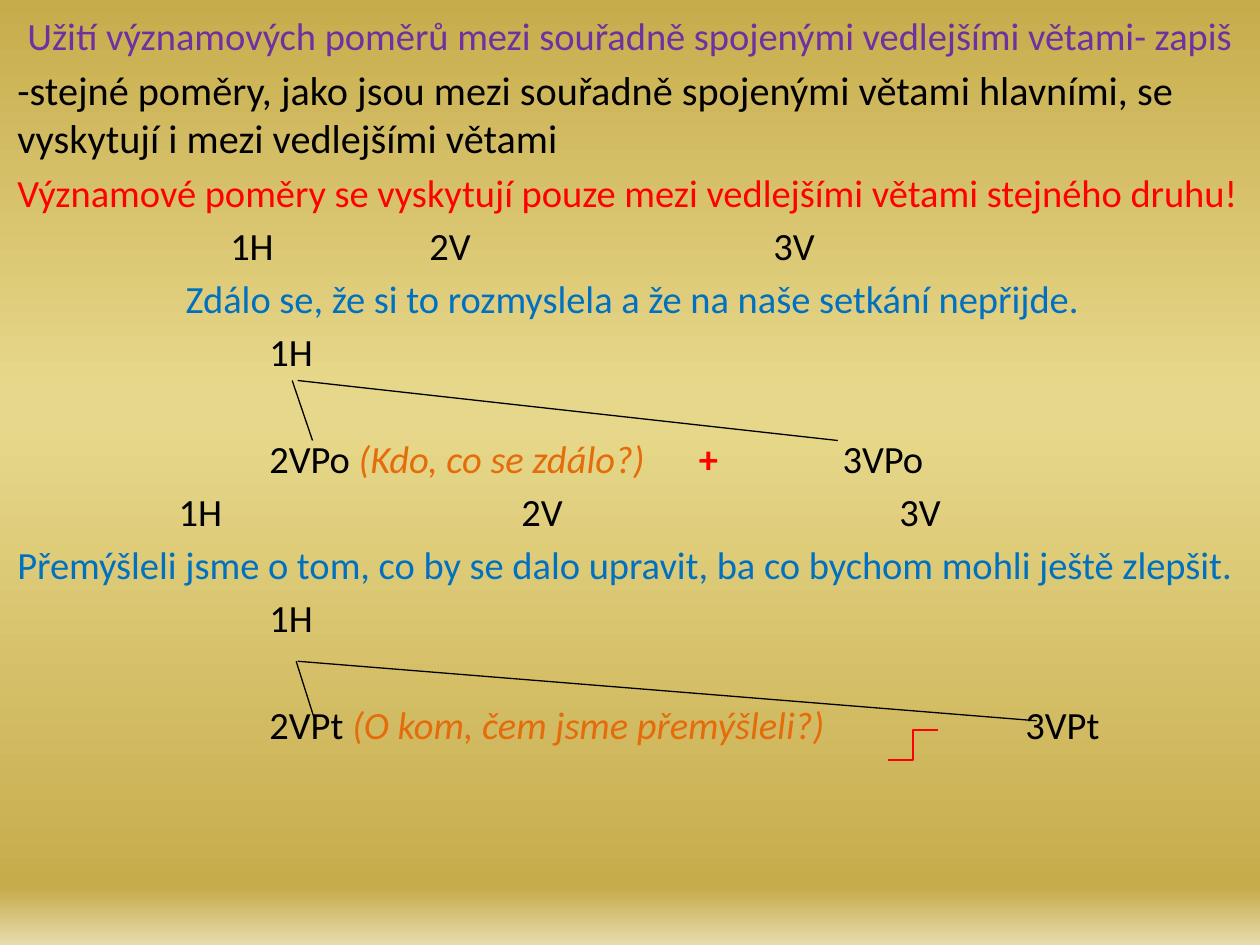
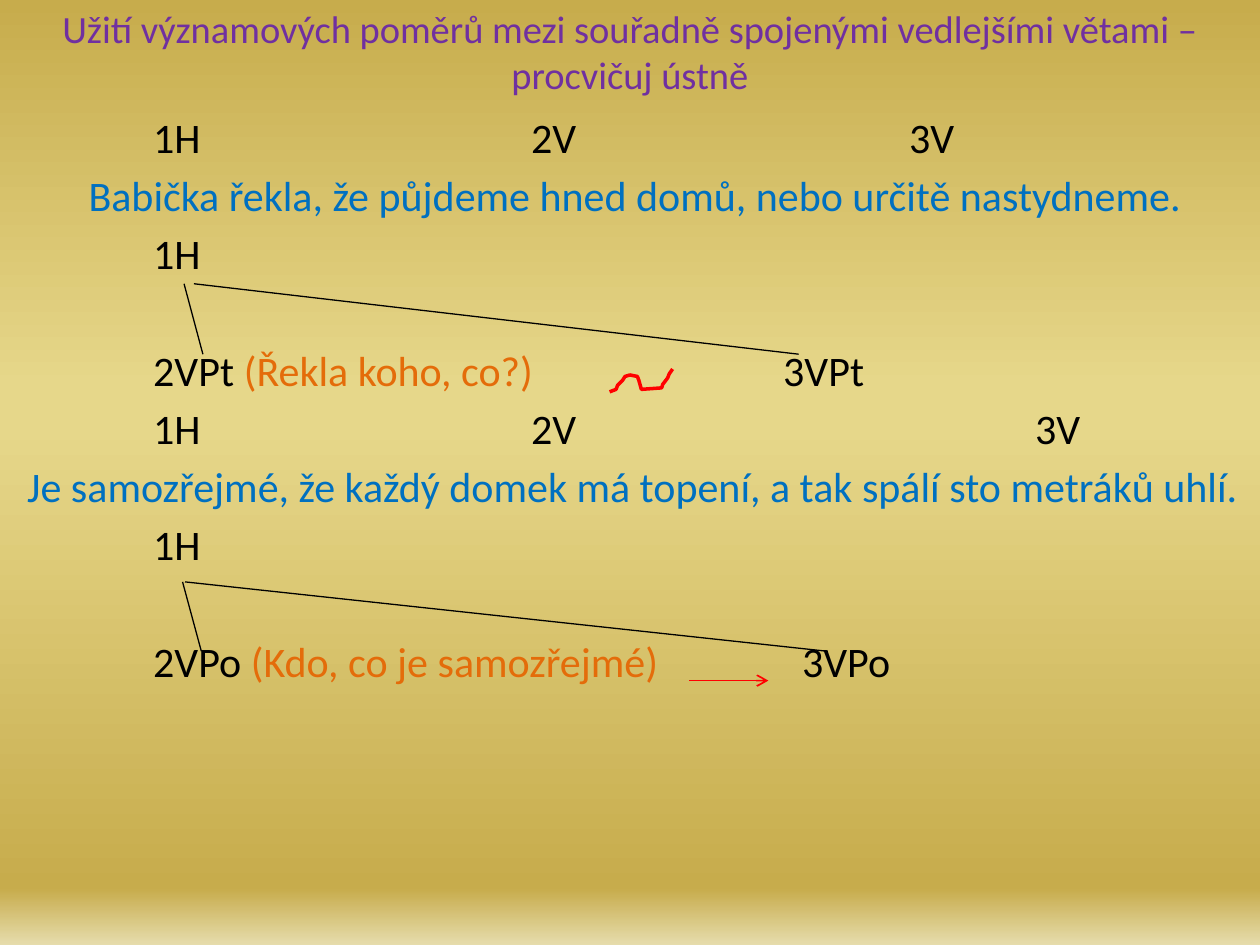
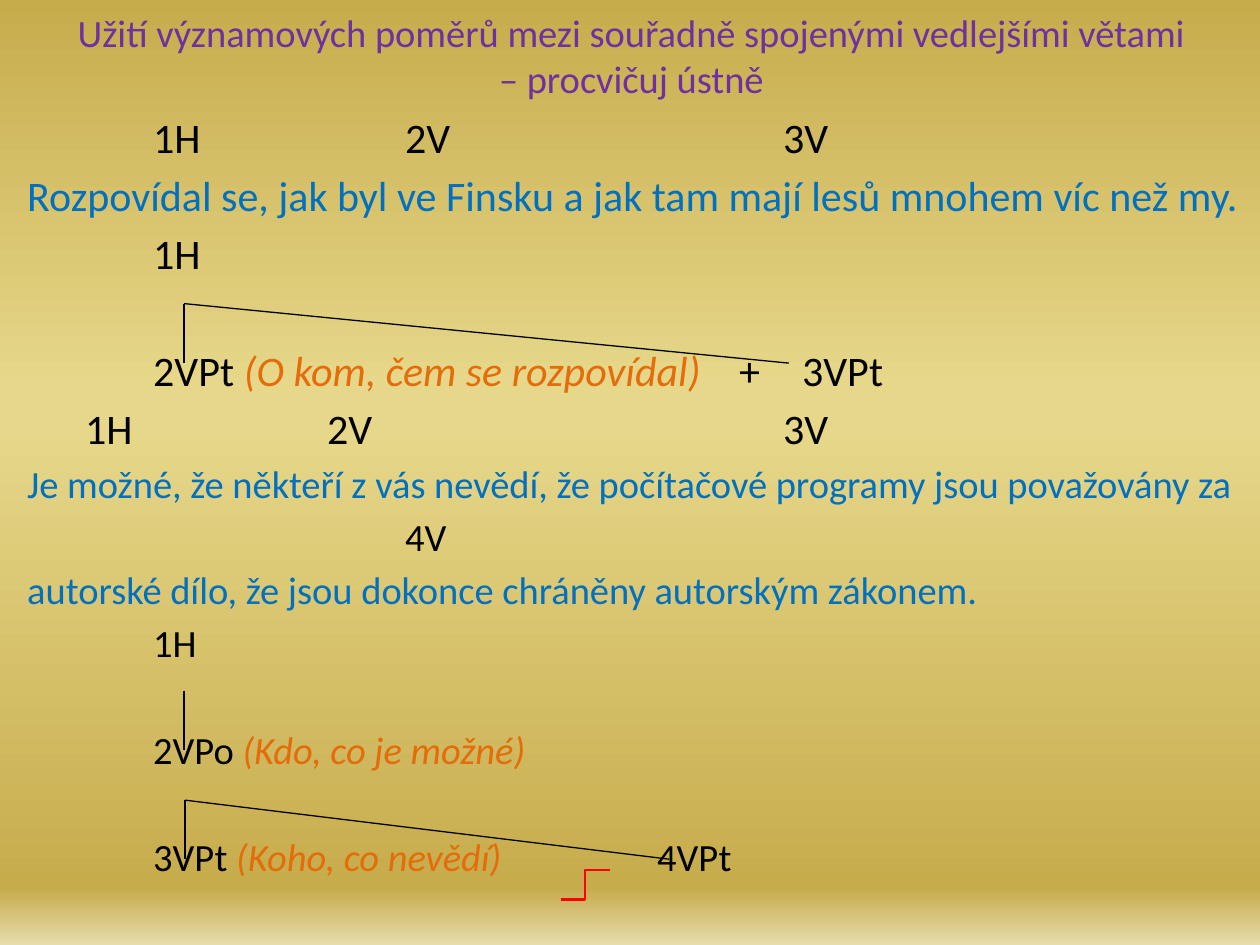
from lxml.etree import SubElement
from pptx import Presentation
from pptx.dml.color import RGBColor
from pptx.enum.shapes import MSO_CONNECTOR as Connector
from pptx.enum.text import MSO_ANCHOR as Anchor, PP_ALIGN as Align
from pptx.oxml.ns import qn
from pptx.util import Cm, Pt

COLORS = {
    "title": "7030A0",
    "text": "000000",
    "warning": "FF0000",
    "sentence": "0070C0",
    "question": "E46C0A",
}
BACKGROUND_STOPS = [(0, "C7AC4C"), (41, "E6D78A"), (45, "E6D78A"),
                    (94, "C7AC4C"), (100, "E6DCAC")]
FONT = "Calibri"
COLUMN = 2.54  # width of one tab column in cm
LINE_HEIGHT = 1.22  # line height and paragraph gap, as shares of the font size
PARAGRAPH_GAP = 0.18
PRACTICE_TITLE = ("Užití významových poměrů mezi souřadně spojenými "
                  "vedlejšími větami – procvičuj ústně")


def set_background(master):
    fill = master.background.fill
    fill.gradient()
    fill.gradient_angle = 270
    stops = next(master.element.iter(qn("a:gsLst")))
    for stop in list(stops):
        stops.remove(stop)
    for position, color in BACKGROUND_STOPS:
        stop = SubElement(stops, qn("a:gs"), pos=str(position * 1000))
        SubElement(stop, qn("a:srgbClr"), val=color)


def add_frame(slide, left, top, width, height, anchor=Anchor.TOP):
    box = slide.shapes.add_textbox(Cm(left), Cm(top), Cm(width), Cm(height))
    frame = box.text_frame
    frame.word_wrap = True
    frame.vertical_anchor = anchor
    return frame


def add_run(paragraph, text, color="text", size=22, bold=False, italic=False):
    run = paragraph.add_run()
    run.text = text
    font = run.font
    font.name = FONT
    font.size = Pt(size)
    font.bold = bold
    font.italic = italic
    font.color.rgb = RGBColor.from_string(COLORS[color])


def add_paragraph(frame, size, columns=(), align=Align.LEFT, spaced=False):
    """Start a paragraph with tab stops; spaced leaves one line free above it."""
    if frame.paragraphs[0].runs:
        paragraph = frame.add_paragraph()
        share = LINE_HEIGHT + 2 * PARAGRAPH_GAP if spaced else PARAGRAPH_GAP
        paragraph.space_before = Pt(round(size * share, 2))
    else:
        paragraph = frame.paragraphs[0]
    paragraph.alignment = align
    if columns:
        tabs = SubElement(paragraph._p.get_or_add_pPr(), qn("a:tabLst"))
        for column in columns:
            SubElement(tabs, qn("a:tab"), pos=str(Cm(column * COLUMN)), algn="l")
    return paragraph


def add_title(slide, text, *place):
    paragraph = add_paragraph(add_frame(slide, *place, anchor=Anchor.MIDDLE),
                              22, align=Align.CENTER)
    add_run(paragraph, text, "title")


def write_sentence(frame, text, size=22, color="sentence", align=Align.LEFT):
    add_run(add_paragraph(frame, size, align=align), text, color, size)


def write_labels(frame, labels, size=22):
    """Write clause labels, given as {tab column: label}."""
    paragraph = add_paragraph(frame, size, labels)
    for label in labels.values():
        add_run(paragraph, "\t" + label, size=size)


def write_clauses(frame, column, clause, question, others=None, size=22,
                  italic=True, plus_format=None):
    """Write a clause with its question, then others as {tab column: text}."""
    others = others or {}
    paragraph = add_paragraph(frame, size, [column, *others], spaced=True)
    add_run(paragraph, f"\t{clause} ", size=size)
    add_run(paragraph, question, "question", size, italic=italic)
    for text in others.values():
        text_format = plus_format if text == "+" and plus_format else {}
        add_run(paragraph, "\t" + text, size=size, **text_format)


def add_line(slide, start, end, color="text", width=0.75,
             kind=Connector.STRAIGHT, arrow=False):
    connector = slide.shapes.add_connector(kind, *map(Cm, start + end))
    connector.line.color.rgb = RGBColor.from_string(COLORS[color])
    connector.line.width = Pt(width)
    if arrow:
        SubElement(connector.line._get_or_add_ln(), qn("a:tailEnd"), type="arrow")
    SubElement(connector._element.spPr, qn("a:effectLst"))


def add_branches(slide, top, bottom, *spans):
    """Draw lines between two heights, each span giving its top and bottom x."""
    for upper, lower in spans:
        add_line(slide, (upper, top), (lower, bottom))


def add_step(slide, left, bottom):
    """Draw the red step that marks gradation."""
    add_line(slide, (left, bottom), (left + 0.99, bottom - 0.6),
             "warning", 1.5, Connector.ELBOW)


def add_wave(slide, points):
    """Draw the red hand-drawn mark of choice."""
    start, *rest = [(Cm(x), Cm(y)) for x, y in points]
    builder = slide.shapes.build_freeform(*start)
    builder.add_line_segments(rest, close=False)
    shape = builder.convert_to_shape()
    shape.shadow.inherit = False
    shape.fill.background()
    shape.line.color.rgb = RGBColor.from_string(COLORS["warning"])
    shape.line.width = Pt(2)


def build_rules(slide):
    add_title(slide, "Užití významových poměrů mezi souřadně spojenými "
              "vedlejšími větami- zapiš", 0, -0.48, 25.4, 2.39)
    body = add_frame(slide, 0.1, 1.19, 25.3, 17.55)
    write_sentence(body, "-stejné poměry, jako jsou mezi souřadně spojenými větami "
                   "hlavními, se vyskytují i mezi vedlejšími větami", 23, "text")
    write_sentence(body, "Významové poměry se vyskytují pouze mezi vedlejšími "
                   "větami stejného druhu!", color="warning")
    write_labels(body, {1.69: "1H", 3.27: "2V", 6: "3V"})
    write_sentence(body, "Zdálo se, že si to rozmyslela a že na naše setkání nepřijde.",
                   align=Align.CENTER)
    write_labels(body, {2: "1H"})
    write_clauses(body, 2, "2VPo", "(Kdo, co se zdálo?)", {5.41: "+", 6.55: "3VPo"},
                  plus_format={"color": "warning", "bold": True})
    write_labels(body, {1.28: "1H", 4: "2V", 7: "3V"})
    write_sentence(body, "Přemýšleli jsme o tom, co by se dalo upravit, "
                   "ba co bychom mohli ještě zlepšit.")
    write_labels(body, {2: "1H"})
    write_clauses(body, 2, "2VPt", "(O kom, čem jsme přemýšleli?)", {8: "3VPt"})
    add_branches(slide, 7.67, 8.88, (5.89, 6.3), (6, 16.89))
    add_branches(slide, 13.33, 14.53, (5.97, 6.35), (6, 20.9))
    add_step(slide, 17.91, 15.32)


def build_first_practice(slide):
    add_title(slide, PRACTICE_TITLE, 0.3, -0.08, 24.8, 2.21)
    body = add_frame(slide, 0.3, 2.13, 25, 16.41)
    write_labels(body, {1: "1H", 4: "2V", 7: "3V"}, 24)
    write_sentence(body, "Babička řekla, že půjdeme hned domů, nebo určitě nastydneme.",
                   24, align=Align.CENTER)
    write_labels(body, {1: "1H"}, 24)
    write_clauses(body, 1, "2VPt", "(Řekla koho, co?)", {6: "3VPt"}, 24, italic=False)
    write_labels(body, {1: "1H", 4: "2V", 8: "3V"}, 24)
    write_sentence(body, "Je samozřejmé, že každý domek má topení, "
                   "a tak spálí sto metráků uhlí.", 24)
    write_labels(body, {1: "1H"}, 24)
    write_clauses(body, 1, "2VPo", "(Kdo, co je samozřejmé)", {6.15: "3VPo"}, 24,
                  italic=False)
    add_wave(slide, [(12.29, 7.9), (12.42, 7.85), (12.45, 7.77), (12.55, 7.67),
                     (12.6, 7.59), (12.7, 7.56), (12.85, 7.59), (12.88, 7.67),
                     (12.93, 7.85), (13.34, 7.82), (13.36, 7.75), (13.46, 7.62),
                     (13.49, 7.54), (13.56, 7.44)])
    add_branches(slide, 5.72, 7.14, (3.71, 4.09), (3.91, 16.1))
    add_branches(slide, 11.73, 13.13, (3.68, 4.06), (3.73, 16.69))
    add_line(slide, (13.89, 13.72), (15.49, 13.72), "warning", 1, arrow=True)


def build_second_practice(slide):
    add_title(slide, PRACTICE_TITLE, 1.3, -0.28, 22.86, 2.79)
    body = add_frame(slide, 0.3, 2.13, 25.1, 16.61)
    write_labels(body, {1: "1H", 3: "2V", 6: "3V"}, 24)
    write_sentence(body, "Rozpovídal se, jak byl ve Finsku a jak tam mají lesů "
                   "mnohem víc než my.", 24)
    write_labels(body, {1: "1H"}, 24)
    write_clauses(body, 1, "2VPt", "(O kom, čem se rozpovídal)",
                  {5.65: "+", 6.15: "3VPt"}, 24)
    write_labels(body, {0.46: "1H", 2.38: "2V", 6: "3V"}, 24)
    write_sentence(body, "Je možné, že někteří z vás nevědí, že počítačové programy "
                   "jsou považovány za")
    write_labels(body, {3: "4V"})
    write_sentence(body, "autorské dílo, že jsou dokonce chráněny autorským zákonem.")
    write_labels(body, {1: "1H"})
    write_clauses(body, 1, "2VPo", "(Kdo, co je možné)")
    write_clauses(body, 1, "3VPt", "(Koho, co nevědí)", {5: "4VPt"})
    add_branches(slide, 6.12, 7.32, (3.71, 3.71), (3.71, 15.9))
    add_branches(slide, 13.92, 15.11, (3.71, 3.71))
    add_branches(slide, 16.13, 17.32, (3.73, 3.73), (3.73, 13.49))
    add_step(slide, 11.3, 18.14)


def main():
    presentation = Presentation()
    presentation.slide_width = Cm(25.4)
    presentation.slide_height = Cm(19.05)
    set_background(presentation.slide_master)
    blank = presentation.slide_layouts[6]
    for build in (build_rules, build_first_practice, build_second_practice):
        build(presentation.slides.add_slide(blank))
    presentation.save("out.pptx")


if __name__ == "__main__":
    main()
